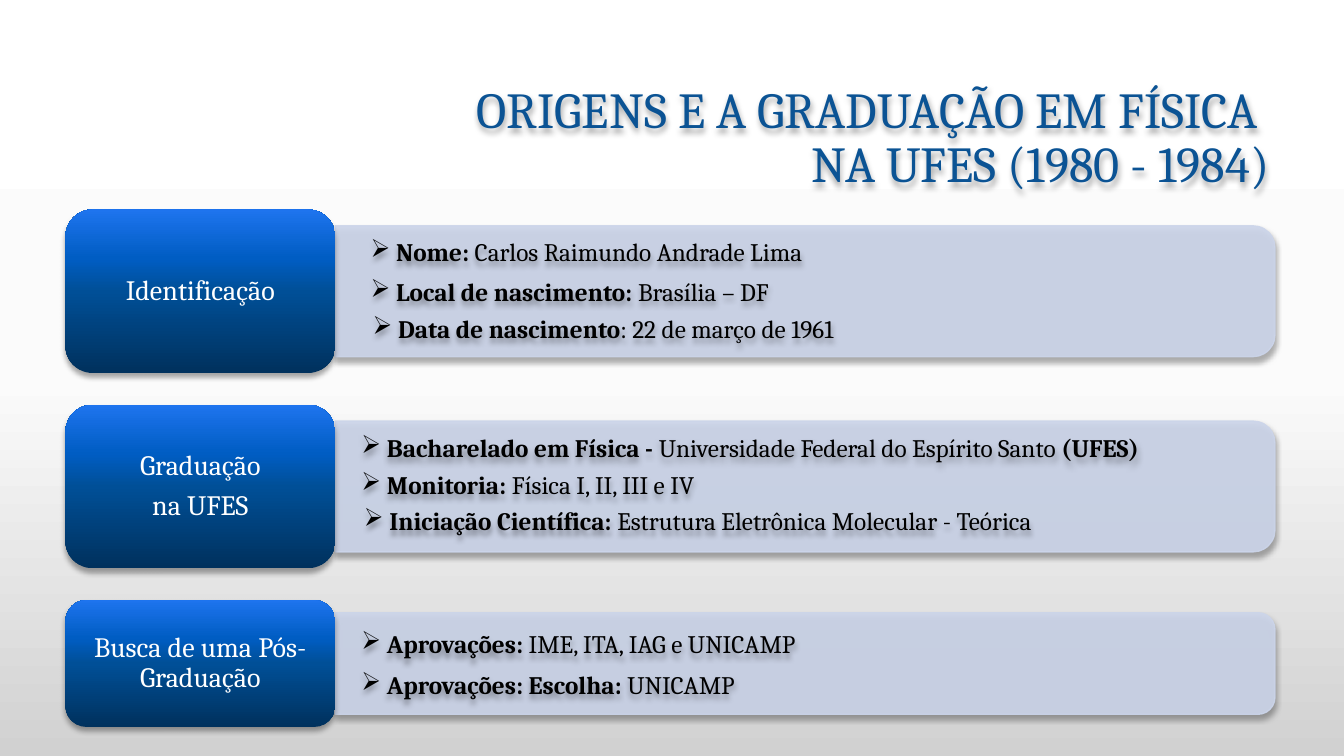
from pptx import Presentation, util as u
from pptx.dml.color import RGBColor
from pptx.enum import shapes, text
from pptx.oxml.ns import qn
from pptx.oxml.xmlchemy import OxmlElement

HUES = {"title": "0B5394", "panel": "CCD5EA", "label": "FFFFFF",
        "body": "000000", "shade": "000000"}
BACK = [(0, "FFFFFF"), (50, "FBFBFB"), (100, "D1D1D1")]
BLUES = [(0, "00315D"), (50, "004F97"), (70, "005DC3"), (100, "1E74EE")]
FONT = "Cambria"

# Label blocks: text, height in cm
LABELS = [(["Identificação"], 4.12),
          (["Graduação", "na UFES"], 4.12),
          (["Busca de uma Pós-Graduação"], 3.2)]
LEFT, TOP, WIDE, GAP = 1.65, 5.28, 6.8, 0.8
LONG = 23.68   # length of a panel
SHARE = 0.8    # panel height as part of the label height

# Bullet lines: left, top, width in cm, then runs that alternate bold and plain
ITEMS = [
    (9.09, 5.84, 12.78, [" Nome:", " Carlos Raimundo Andrade Lima"]),
    (9.09, 6.83, 11.3, [" Local de nascimento: ", "Brasília – DF"]),
    (9.14, 7.77, 13.49, [" Data de nascimento", ": 22 de março de 1961"]),
    (8.86, 10.77, 23.04, [" Bacharelado em Física - ",
                          "Universidade Federal do Espírito Santo ", "(UFES)"]),
    (8.86, 11.71, 11.33, [" Monitoria: ", "Física I, II, III e IV"]),
    (8.92, 12.62, 19.74, [" Iniciação Científica: ",
                          "Estrutura Eletrônica Molecular - Teórica"]),
    (8.86, 15.72, 12.8, [" Aprovações: ", "IME, ITA, IAG e UNICAMP"]),
    (8.86, 16.74, 11, [" Aprovações: Escolha: ", "UNICAMP"]),
]


def apply(thing, **form):
    for key, value in form.items():
        setattr(thing, key, value)


def style(font, size, hue, bold=False):
    apply(font, name=FONT, size=u.Pt(size), bold=bold)
    font.color.rgb = RGBColor.from_string(HUES[hue])


def node(root, tag, **attrs):
    child = OxmlElement(tag)
    for key, value in attrs.items():
        child.set(key, str(value))
    root.append(child)
    return child


def blend(fill, root, stops, angle):
    """Fill with a gradient of any number of stops."""
    fill.gradient()
    fill.gradient_angle = angle
    grads = next(root.iter(qn("a:gsLst")))
    for old in list(grads):
        grads.remove(old)
    for place, hue in stops:
        stop = node(grads, "a:gs", pos=place * 1000)
        node(stop, "a:srgbClr", val=hue)


def shade(shape):
    """Soft shadow straight below."""
    shape.shadow.inherit = False
    effect = next(shape.element.iter(qn("a:effectLst")))
    drop = node(effect, "a:outerShdw", blurRad=u.Pt(4), dist=u.Pt(3),
                dir=90 * 60000, algn="ctr", rotWithShape=0)
    color = node(drop, "a:srgbClr", val=HUES["shade"])
    node(color, "a:alpha", val=35000)


def panel(slide, left, mid, high):
    # Turned a quarter, so the round corners face right
    shape = slide.shapes.add_shape(
        shapes.MSO_SHAPE.ROUND_2_SAME_RECTANGLE,
        u.Cm(left + (LONG - high) / 2), u.Cm(mid - LONG / 2),
        u.Cm(high), u.Cm(LONG))
    shape.rotation = 90
    shape.line.width = u.Pt(1)
    for fill in (shape.fill, shape.line.fill):
        fill.solid()
        fill.fore_color.rgb = RGBColor.from_string(HUES["panel"])
    for color in list(shape.element.iter(qn("a:srgbClr"))):
        node(color, "a:alpha", val=90000)
    shade(shape)


def label(slide, top, high, lines):
    shape = slide.shapes.add_shape(
        shapes.MSO_SHAPE.ROUNDED_RECTANGLE,
        u.Cm(LEFT), u.Cm(top), u.Cm(WIDE), u.Cm(high))
    blend(shape.fill, shape.element, BLUES, 90)
    shape.line.fill.background()
    shade(shape)
    frame = shape.text_frame
    apply(frame, text="\n".join(lines), word_wrap=True,
          vertical_anchor=text.MSO_ANCHOR.MIDDLE,
          margin_left=u.Cm(0.2), margin_right=u.Cm(0.2),
          margin_top=u.Cm(0.1), margin_bottom=u.Cm(0.1))
    for para in frame.paragraphs:
        apply(para, alignment=text.PP_ALIGN.CENTER, line_spacing=0.9,
              space_after=u.Pt(7))
        style(para.runs[0].font, 20, "label")


def box(slide, left, top, wide, high):
    shape = slide.shapes.add_textbox(*map(u.Cm, (left, top, wide, high)))
    shade(shape)
    shape.text_frame.word_wrap = True
    return shape.text_frame


def title(slide):
    frame = box(slide, 9.2, 2.31, 23.04, 2.39)
    frame.vertical_anchor = text.MSO_ANCHOR.MIDDLE
    para = frame.paragraphs[0]
    para.text = "ORIGENS E A GRADUAÇÃO EM FÍSICA \vNA UFES (1980 - 1984)"
    apply(para, alignment=text.PP_ALIGN.RIGHT, line_spacing=0.9)
    for run in para.runs:
        style(run.font, 36, "title")


def item(slide, left, top, wide, parts):
    frame = box(slide, left, top, wide, 1.02)
    frame.auto_size = text.MSO_AUTO_SIZE.SHAPE_TO_FIT_TEXT
    para = frame.paragraphs[0]
    node(para._p.get_or_add_pPr(), "a:buChar", char="➢")
    style(para.font, 18, "body", True)
    for spot, words in enumerate(parts):
        run = para.add_run()
        run.text = words
        style(run.font, 18, "body", spot % 2 == 0)


def main():
    deck = Presentation()
    apply(deck, slide_width=u.Cm(33.87), slide_height=u.Cm(19.05))
    slide = deck.slides.add_slide(deck.slide_layouts[6])
    blend(slide.background.fill, slide.element, BACK, 270)

    title(slide)

    # Stack of labels, each with its panel centred beside it
    top = TOP
    for lines, high in LABELS:
        panel(slide, LEFT + WIDE, top + high / 2, high * SHARE)
        label(slide, top, high, lines)
        top += high + GAP

    for entry in ITEMS:
        item(slide, *entry)

    deck.save("out.pptx")


if __name__ == "__main__":
    main()
